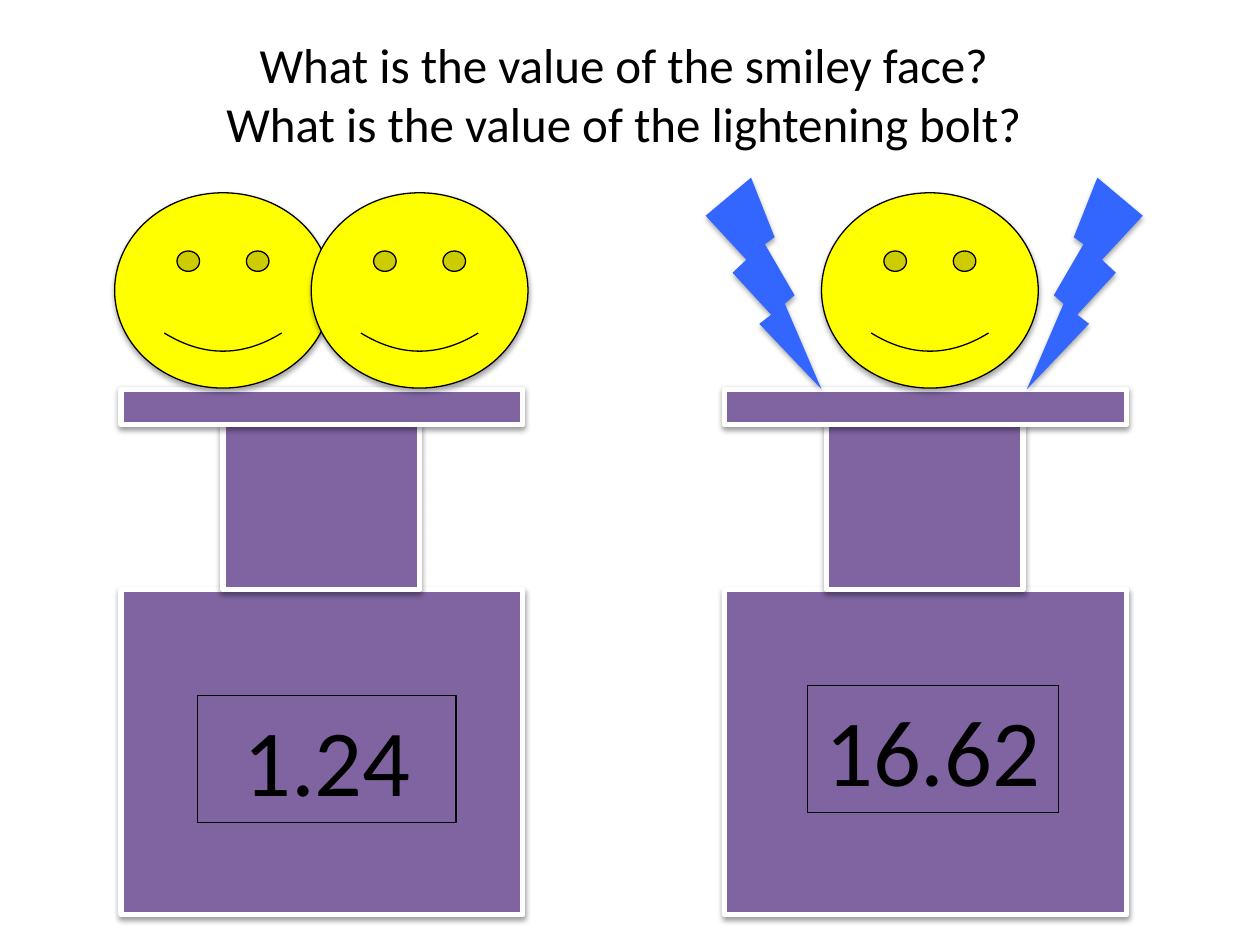
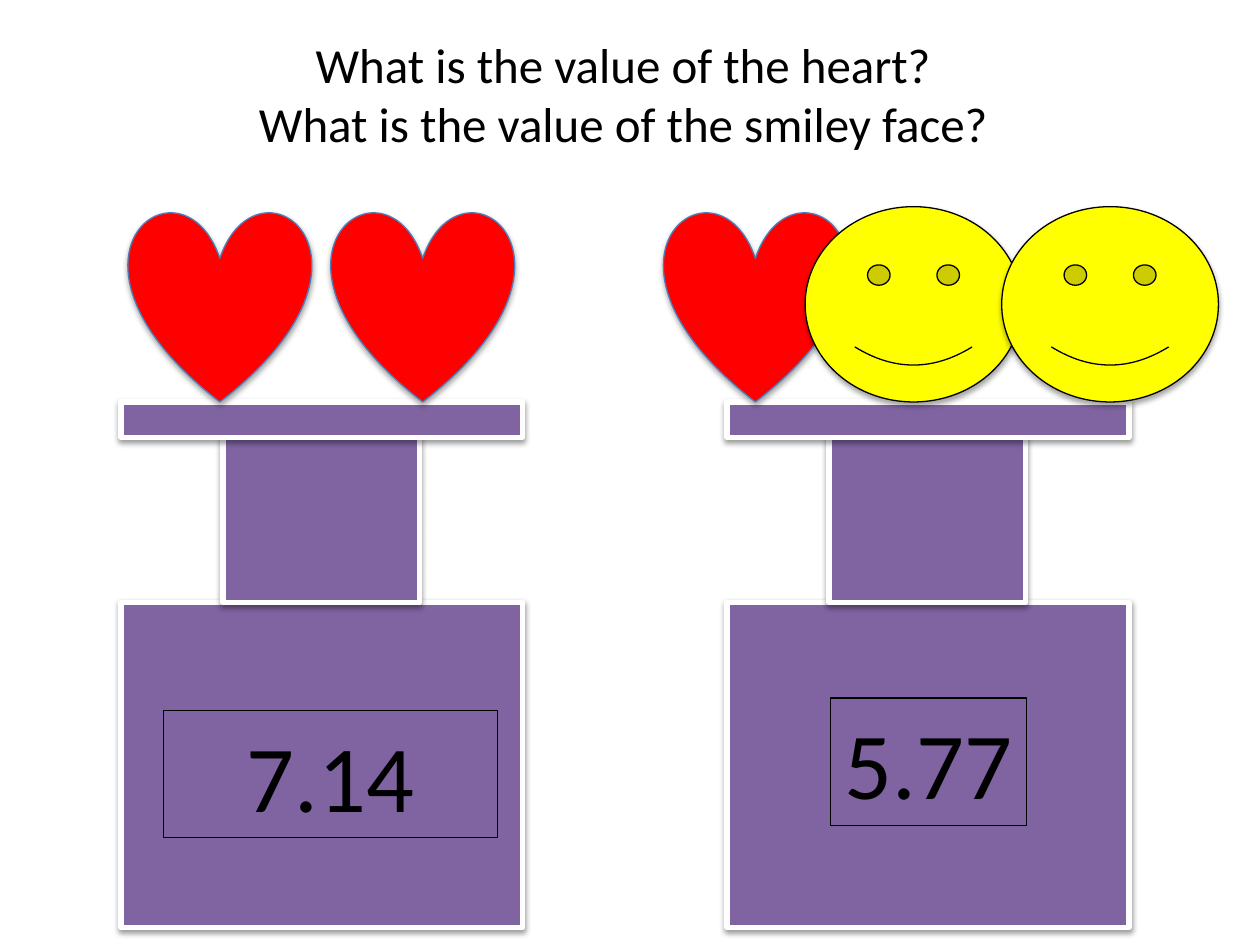
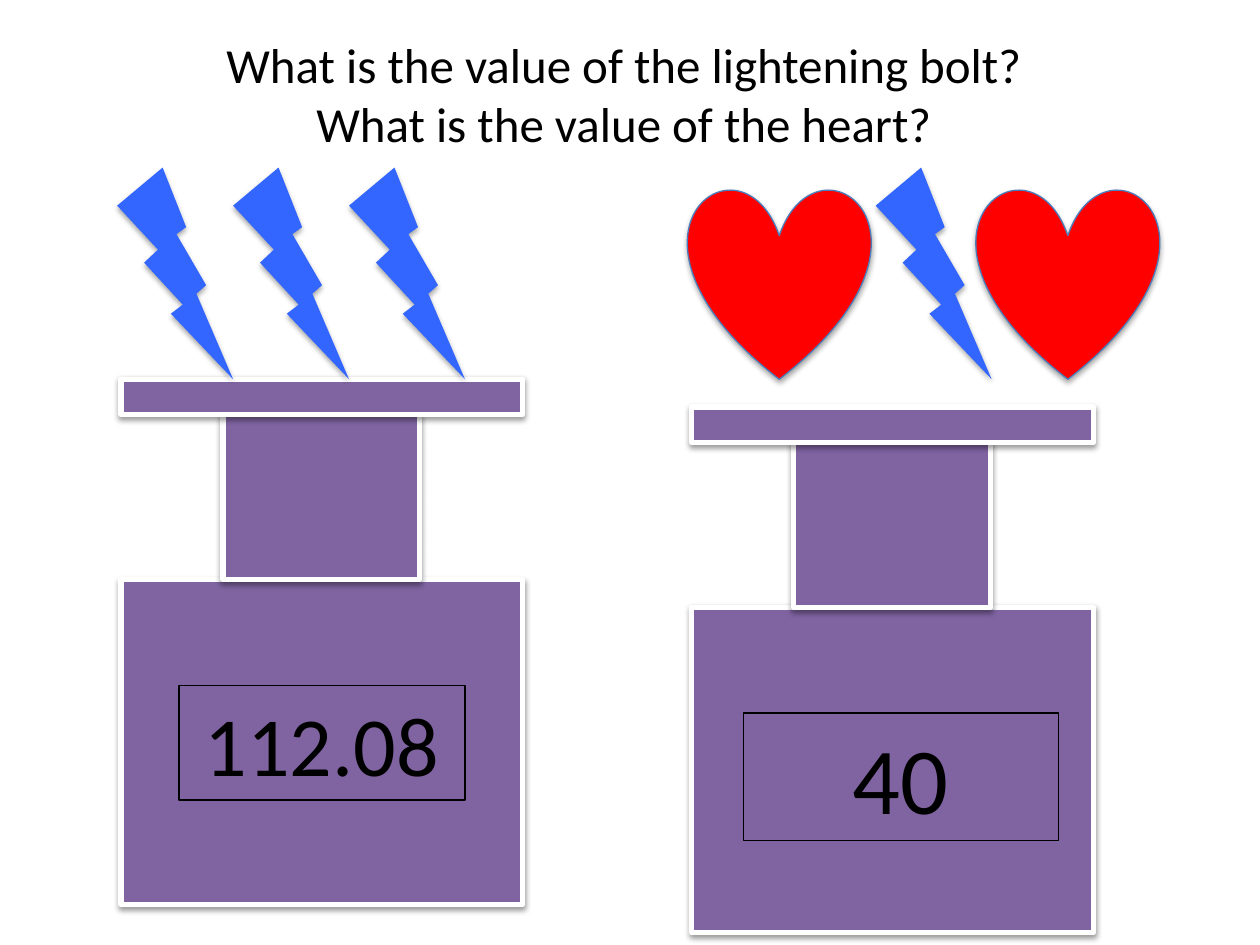
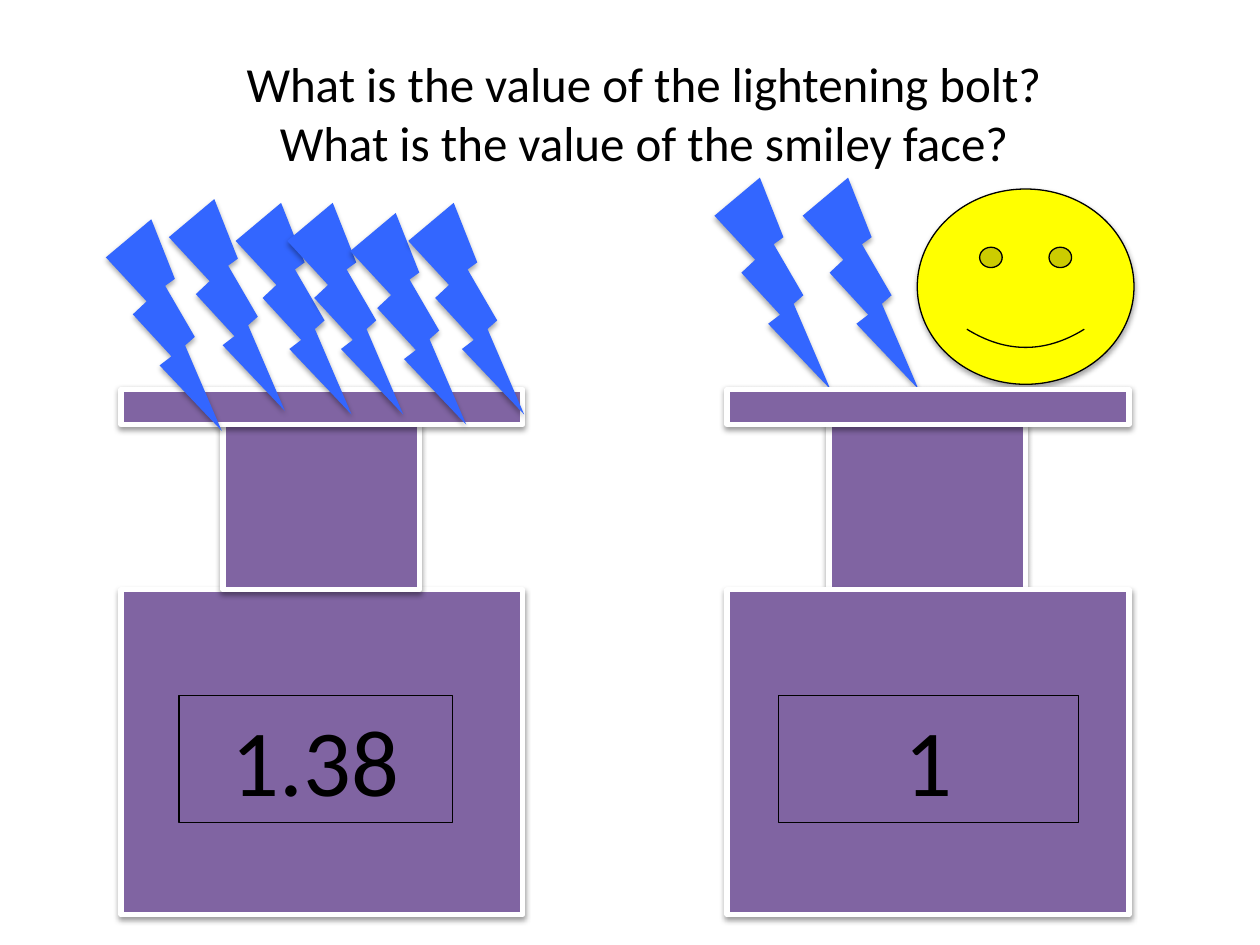
from dataclasses import dataclass

from lxml import etree
from pptx import Presentation
from pptx.dml.color import RGBColor
from pptx.enum.shapes import MSO_SHAPE
from pptx.enum.text import MSO_ANCHOR, MSO_AUTO_SIZE, PP_ALIGN
from pptx.oxml.ns import qn
from pptx.shapes.autoshape import Shape
from pptx.shapes.shapetree import GroupShapes, SlideShapes
from pptx.slide import Slide
from pptx.text.text import TextFrame
from pptx.util import Inches, Pt

RECTANGLE = MSO_SHAPE.RECTANGLE
SMILEY = MSO_SHAPE.SMILEY_FACE
BOLT = MSO_SHAPE.LIGHTNING_BOLT
HEART = MSO_SHAPE.HEART
CENTER = PP_ALIGN.CENTER
MIDDLE = MSO_ANCHOR.MIDDLE
GROW = MSO_AUTO_SIZE.SHAPE_TO_FIT_TEXT

FONT = "Calibri"
BLACK, WHITE, PURPLE = "000000", "FFFFFF", "8064A2"
TITLE_ONLY = 5
TITLE_HEIGHT = 1.04


@dataclass(frozen=True)
class Shadow:
    alpha: int
    distance: int


@dataclass(frozen=True)
class Look:
    fill: str | None
    line: str | None
    line_width: float = 0.75
    shadow: Shadow | None = None


@dataclass(frozen=True)
class Kind:
    preset: MSO_SHAPE
    width: float
    height: float
    look: Look


@dataclass(frozen=True)
class Figure:
    kind: Kind
    left: float
    top: float
    flipped: bool = False


@dataclass(frozen=True)
class Readout:
    value: str
    left: float
    top: float
    width: float
    size: int = 54


@dataclass(frozen=True)
class Scale:
    left: float
    top: float
    readout: Readout
    base_in_front: bool = False


@dataclass(frozen=True)
class Puzzle:
    questions: tuple[str, str]
    title_left: float
    title_top: float
    title_width: float
    items: list[Scale | Figure]


FIGURE_SHADOW = Shadow(35, 23000)
SCALE_LOOK = Look(PURPLE, WHITE, 3, Shadow(38, 20000))
READOUT_LOOK = Look(None, BLACK)
FACE = Kind(SMILEY, 1.72, 1.55, Look("FFFF00", BLACK, shadow=FIGURE_SHADOW))
LIGHTNING = Kind(BOLT, 0.92, 1.68, Look("3366FF", None, shadow=FIGURE_SHADOW))
LOVE = Kind(HEART, 1.45, 1.52, Look("FF0000", "4B7EBC", shadow=FIGURE_SHADOW))

ASK_FACE = "What is the value of the smiley face?"
ASK_BOLT = "What is the value of the lightening bolt?"
ASK_HEART = "What is the value of the heart?"


def row(kind: Kind, top: float, *lefts: float) -> list[Figure]:
    return [Figure(kind, left, top) for left in lefts]


PUZZLES = [
    Puzzle((ASK_FACE, ASK_BOLT), 1.65, 0.22, 6.6, [
        Scale(5.75, 3.09, Readout("16.62", 6.41, 5.44, 1.99)),
        Scale(0.96, 3.09, Readout("1.24", 1.57, 5.52, 2.05)),
        *row(FACE, 1.53, 0.91, 2.47, 6.52),
        Figure(LIGHTNING, 5.6, 1.41),
        Figure(LIGHTNING, 8.15, 1.41, flipped=True),
    ]),
    Puzzle((ASK_HEART, ASK_FACE), 1.91, 0.22, 6.07, [
        Scale(5.77, 3.19, Readout("5.77", 6.59, 5.54, 1.56)),
        Scale(0.96, 3.19, Readout("7.14", 1.3, 5.64, 2.65)),
        *row(LOVE, 1.67, 1.02, 2.63, 5.27),
        *row(FACE, 1.64, 6.39, 7.95),
    ]),
    Puzzle((ASK_BOLT, ASK_HEART), 1.65, 0.22, 6.6, [
        Scale(0.96, 3.01, Readout("112.08", 1.42, 5.44, 2.27, 48)),
        Scale(5.49, 3.23, Readout("40", 5.9, 5.66, 2.5)),
        *row(LOVE, 1.49, 7.75, 5.46),
        *row(LIGHTNING, 1.33, 6.95, 2.77, 1.85, 0.93),
    ]),
    Puzzle((ASK_BOLT, ASK_FACE), 1.81, 0.37, 6.6, [
        Scale(0.96, 3.09, Readout("1.38", 1.42, 5.52, 2.17)),
        Figure(FACE, 7.28, 1.5),
        *row(LIGHTNING, 1.41, 6.37, 5.67),
        Figure(LIGHTNING, 0.84, 1.74),
        Scale(5.77, 3.09, Readout("1", 6.18, 5.52, 2.38), base_in_front=True),
        Figure(LIGHTNING, 1.34, 1.58),
        *row(LIGHTNING, 1.61, 1.87, 2.28),
        Figure(LIGHTNING, 2.78, 1.69),
        Figure(LIGHTNING, 3.24, 1.61),
    ]),
]


def color(value: str) -> RGBColor:
    return RGBColor.from_string(value)


def add_shadow(shape: Shape, shadow: Shadow) -> None:
    effects = shape.element.spPr.find(qn("a:effectLst"))
    outer = etree.SubElement(effects, qn("a:outerShdw"), blurRad="40000",
                             dist=str(shadow.distance), dir="5400000", rotWithShape="0")
    tint = etree.SubElement(outer, qn("a:srgbClr"), val=BLACK)
    etree.SubElement(tint, qn("a:alpha"), val=str(shadow.alpha * 1000))


def draw_shape(shapes: SlideShapes | GroupShapes, preset: MSO_SHAPE, look: Look,
               left: float, top: float, width: float, height: float) -> Shape:
    shape = shapes.add_shape(preset, Inches(left), Inches(top), Inches(width), Inches(height))
    if look.fill:
        shape.fill.solid()
        shape.fill.fore_color.rgb = color(look.fill)
    else:
        shape.fill.background()
    if look.line:
        shape.line.color.rgb = color(look.line)
        shape.line.width = Pt(look.line_width)
    else:
        shape.line.fill.background()
    shape.shadow.inherit = False
    if look.shadow:
        add_shadow(shape, look.shadow)
    return shape


def write_text(frame: TextFrame, lines: tuple[str, ...], size: int) -> None:
    frame.text = "\n".join(lines)
    frame.auto_size = GROW
    frame.vertical_anchor = MIDDLE
    for para in frame.paragraphs:
        para.alignment = CENTER
        para.font.name = FONT
        para.font.size = Pt(size)
        para.font.color.rgb = color(BLACK)


def draw_readout(shapes: GroupShapes, readout: Readout) -> None:
    height = 1.01 if readout.size == 54 else 0.91
    box = draw_shape(shapes, RECTANGLE, READOUT_LOOK,
                     readout.left, readout.top, readout.width, height)
    write_text(box.text_frame, (readout.value,), readout.size)


def draw_scale(page: Slide, scale: Scale) -> None:
    shapes = page.shapes.add_group_shape().shapes
    base = (0, 1.59, 3.19, 2.58)
    pillar = (0.81, 0.28, 1.56, 1.31)
    tray = (0, 0, 3.19, 0.28)
    parts = [pillar, tray, base] if scale.base_in_front else [base, pillar, tray]
    for left, top, width, height in parts:
        draw_shape(shapes, RECTANGLE, SCALE_LOOK,
                   scale.left + left, scale.top + top, width, height)
    draw_readout(shapes, scale.readout)


def draw_figure(page: Slide, figure: Figure) -> None:
    kind = figure.kind
    shape = draw_shape(page.shapes, kind.preset, kind.look,
                       figure.left, figure.top, kind.width, kind.height)
    if figure.flipped:
        shape.element.spPr.find(qn("a:xfrm")).set("flipH", "1")


def draw_title(page: Slide, puzzle: Puzzle) -> None:
    title = page.shapes.title
    title.left, title.top = Inches(puzzle.title_left), Inches(puzzle.title_top)
    title.width, title.height = Inches(puzzle.title_width), Inches(TITLE_HEIGHT)
    write_text(title.text_frame, puzzle.questions, 28)
    title.text_frame.word_wrap = False


def main() -> None:
    deck = Presentation()
    deck.slide_width, deck.slide_height = Inches(10), Inches(7.5)
    for puzzle in PUZZLES:
        page = deck.slides.add_slide(deck.slide_layouts[TITLE_ONLY])
        draw_title(page, puzzle)
        for item in puzzle.items:
            if isinstance(item, Scale):
                draw_scale(page, item)
            else:
                draw_figure(page, item)
    deck.save("out.pptx")


if __name__ == "__main__":
    main()
